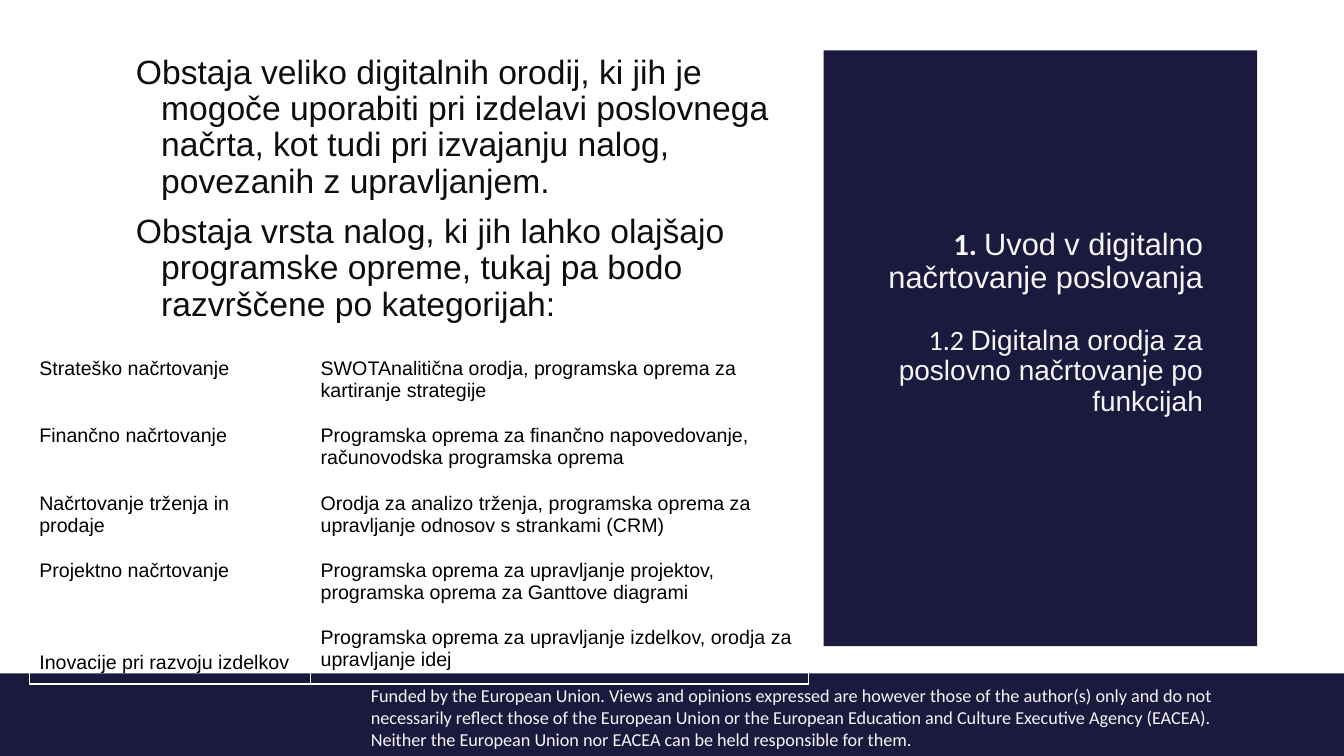
from pptx import Presentation
from pptx.dml.color import RGBColor
from pptx.enum.shapes import MSO_SHAPE
from pptx.enum.text import MSO_ANCHOR, PP_ALIGN
from pptx.util import Inches, Pt

NAVY = RGBColor(0x1B, 0x19, 0x3E)
WHITE = RGBColor(0xFF, 0xFF, 0xFF)
LIGHT = RGBColor(0xF5, 0xF5, 0xF5)
INK = RGBColor(0x0D, 0x0D, 0x0D)
BLACK = RGBColor(0x00, 0x00, 0x00)

FUNDING = (
    "Funded by the European Union. Views and opinions expressed are however those of "
    "the author(s) only and do not necessarily reflect those of the European Union or "
    "the European Education and Culture Executive Agency (EACEA). Neither the European "
    "Union nor EACEA can be held responsible for them."
)
INTRO = [
    "Obstaja veliko digitalnih orodij, ki jih je mogoče uporabiti pri izdelavi "
    "poslovnega načrta, kot tudi pri izvajanju nalog, povezanih z upravljanjem.",
    "Obstaja vrsta nalog, ki jih lahko olajšajo programske opreme, tukaj pa bodo "
    "razvrščene po kategorijah:",
]
TOOLS = [
    ("Strateško načrtovanje",
     "SWOTAnalitična orodja, programska oprema za kartiranje strategije"),
    ("Finančno načrtovanje",
     "Programska oprema za finančno napovedovanje, računovodska programska oprema"),
    ("Načrtovanje trženja in prodaje",
     "Orodja za analizo trženja, programska oprema za upravljanje odnosov s strankami (CRM)"),
    ("Projektno načrtovanje",
     "Programska oprema za upravljanje projektov, programska oprema za Ganttove diagrami"),
    ("Inovacije pri razvoju izdelkov",
     "Programska oprema za upravljanje izdelkov, orodja za upravljanje idej"),
]


class SlideBuilder:
    heading_font = "Arial"
    number_font = "Calibri"

    def __init__(self, slide):
        self.slide = slide
        slide.background.fill.solid()
        slide.background.fill.fore_color.rgb = WHITE

    def style(self, font, name, size, color, bold=False):
        font.name, font.size, font.bold = name, Pt(size), bold
        font.color.rgb = color

    def panel(self, left, top, width, height):
        shape = self.slide.shapes.add_shape(
            MSO_SHAPE.RECTANGLE, Inches(left), Inches(top), Inches(width), Inches(height))
        shape.shadow.inherit = False
        shape.fill.solid()
        shape.fill.fore_color.rgb = NAVY
        shape.line.fill.background()

    def text_box(self, left, top, width, height, paragraphs, font_name, size, color):
        box = self.slide.shapes.add_textbox(
            Inches(left), Inches(top), Inches(width), Inches(height))
        text_frame = box.text_frame
        text_frame.word_wrap = True
        text_frame.text = "\n".join(paragraphs)
        for paragraph in text_frame.paragraphs:
            for run in paragraph.runs:
                self.style(run.font, font_name, size, color)
        return text_frame

    def intro(self, left, top, width, height, paragraphs):
        """Add large paragraphs with a hanging indent."""
        text_frame = self.text_box(
            left, top, width, height, paragraphs, self.heading_font, 24, INK)
        for index, paragraph in enumerate(text_frame.paragraphs):
            paragraph.line_spacing = 0.9
            paragraph.space_before = Pt(10 if index else 0)
            properties = paragraph._p.get_or_add_pPr()
            properties.set("marL", str(Inches(0.5)))
            properties.set("indent", str(Inches(-0.25)))

    def numbered_heading(self, left, top, width, height, number, title, size,
                         bold_number=False, anchor=MSO_ANCHOR.TOP):
        text_frame = self.text_box(
            left, top, width, height, [number + " "], self.number_font, size, LIGHT)
        text_frame.vertical_anchor = anchor
        paragraph = text_frame.paragraphs[0]
        paragraph.alignment = PP_ALIGN.RIGHT
        paragraph.line_spacing = 0.9
        paragraph.runs[0].font.bold = bold_number
        run = paragraph.add_run()
        run.text = title
        self.style(run.font, self.heading_font, size, LIGHT)

    def table(self, left, top, column_widths, row_height, rows):
        """Add a plain table whose last label sits at the foot of its cell."""
        table = self.slide.shapes.add_table(
            len(rows), len(column_widths), Inches(left), Inches(top),
            Inches(sum(column_widths)), Inches(row_height * len(rows))).table
        table.first_row = table.horz_banding = False
        for column, width in zip(table.columns, column_widths):
            column.width = Inches(width)
        for row, texts in zip(table.rows, rows):
            row.height = Inches(row_height)
            for cell, text in zip(row.cells, texts):
                cell.fill.background()
                cell.margin_left = cell.margin_right = Inches(0.1)
                cell.margin_top = cell.margin_bottom = Inches(0.1)
                cell.text_frame.text = text
                self.style(cell.text_frame.paragraphs[0].runs[0].font,
                           self.heading_font, 14, BLACK)
        table.cell(len(rows) - 1, 0).vertical_anchor = MSO_ANCHOR.BOTTOM


def main():
    presentation = Presentation()
    presentation.slide_width = Inches(13.33)
    presentation.slide_height = Inches(7.5)
    builder = SlideBuilder(presentation.slides.add_slide(presentation.slide_layouts[6]))

    builder.panel(0, 6.68, 13.33, 0.82)
    builder.panel(8.17, 0.5, 4.3, 5.91)
    builder.text_box(3.58, 6.74, 8.84, 0.76, [FUNDING], builder.number_font, 13, LIGHT)
    builder.numbered_heading(
        8.6, 1.95, 3.43, 1.03, "1.", "Uvod v digitalno načrtovanje poslovanja", 22,
        bold_number=True, anchor=MSO_ANCHOR.BOTTOM)
    builder.numbered_heading(
        8.6, 3.19, 3.43, 2.81, "1.2",
        "Digitalna orodja za poslovno načrtovanje po funkcijah", 20)
    builder.intro(1, 0.5, 6.75, 5.91, INTRO)
    builder.table(0.29, 3.45, [2.79, 4.94], 0.63, TOOLS)

    presentation.save("out.pptx")


if __name__ == "__main__":
    main()
